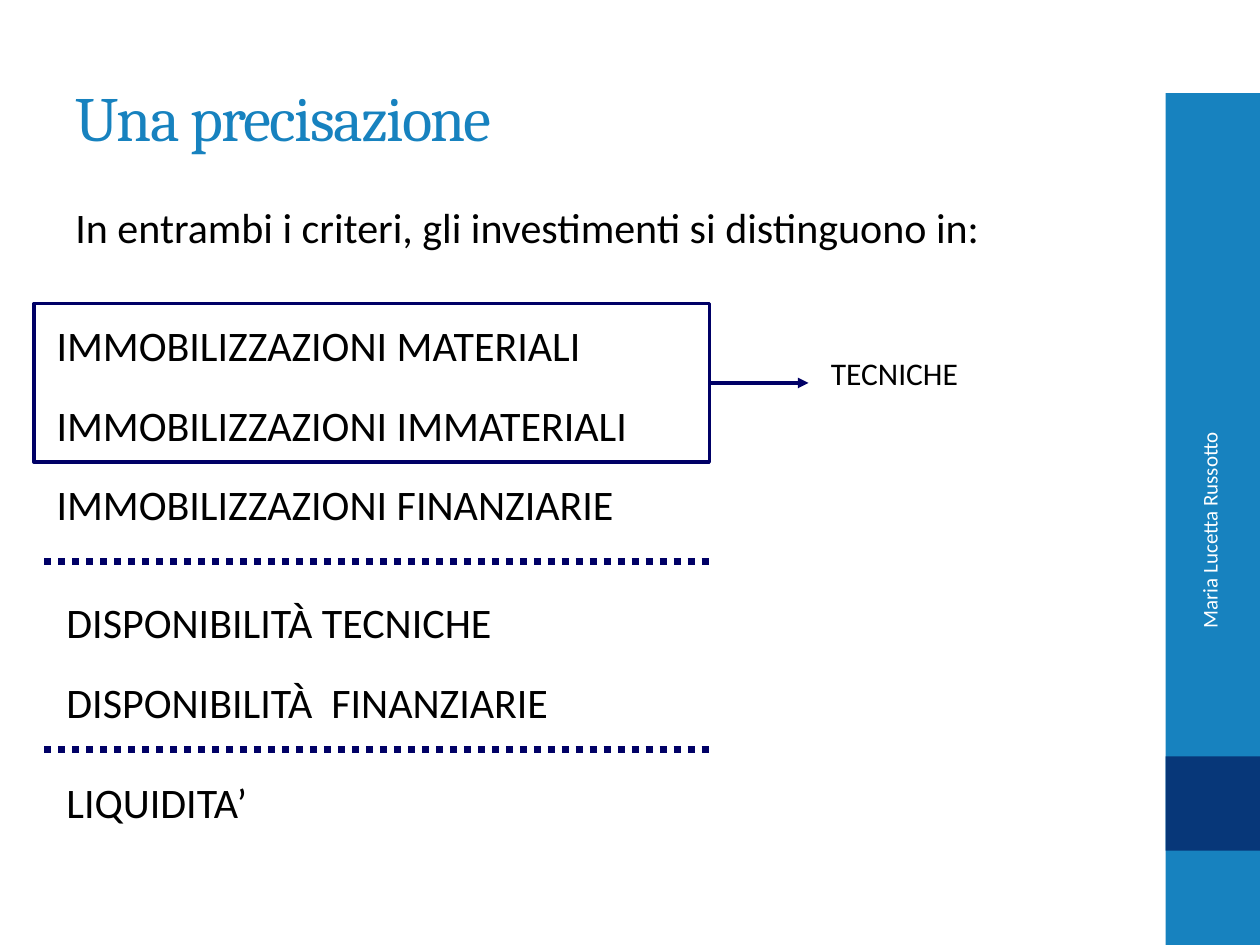
from lxml import etree
from pptx import Presentation
from pptx.dml.color import RGBColor
from pptx.enum.dml import MSO_LINE
from pptx.enum.shapes import MSO_CONNECTOR as CONN, MSO_SHAPE as SHAPE
from pptx.enum.text import MSO_ANCHOR as ANCHOR, PP_ALIGN as ALIGN
from pptx.oxml.ns import qn
from pptx.util import Cm, Pt

BLUE, DARK, NAVY, BLACK, WHITE = "1782BF", "073779", "000066", "000000", "FFFFFF"


def color(value):
    return RGBColor.from_string(value)


def add_text(s, text, x, y, w, h, size=24, font="Calibri", fill=BLACK,
             align=ALIGN.LEFT, anchor=ANCHOR.TOP, rotation=0, spacing=None):
    sp = s.shapes.add_textbox(Cm(x), Cm(y), Cm(w), Cm(h))
    sp.rotation = rotation
    tf = sp.text_frame
    tf.word_wrap = True
    tf.vertical_anchor = anchor
    p = tf.paragraphs[0]
    p.alignment = align
    r = p.add_run()
    r.text = text
    r.font.size, r.font.name = Pt(size), font
    r.font.color.rgb = color(fill)
    if spacing is not None:
        r.font._element.set("spc", str(spacing))
    return sp


def add_rect(s, x, y, w, h, fill=None, line=None):
    sp = s.shapes.add_shape(SHAPE.RECTANGLE, Cm(x), Cm(y), Cm(w), Cm(h))
    sp.shadow.inherit = False
    if fill:
        sp.fill.solid()
        sp.fill.fore_color.rgb = color(fill)
    else:
        sp.fill.background()
    if line:
        sp.line.color.rgb = color(line)
        sp.line.width = Pt(2)
    else:
        sp.line.fill.background()
    return sp


def add_line(s, x1, x2, y, width, dash=None, arrow=False):
    cx = s.shapes.add_connector(CONN.STRAIGHT, Cm(x1), Cm(y), Cm(x2), Cm(y))
    cx.line.color.rgb = color(NAVY)
    cx.line.width = Pt(width)
    if dash:
        cx.line.dash_style = dash
    if arrow:
        etree.SubElement(cx.line._get_or_add_ln(), qn("a:tailEnd"), type="triangle")
    etree.SubElement(cx._element.spPr, qn("a:effectLst"))
    return cx


def add_sidebar(s, x, y, w, h):
    add_rect(s, x, y, w, h, fill=BLUE)
    add_rect(s, x, y + h - 2 * w, w, w, fill=DARK)
    length, depth = 6.58, 1.02
    add_text(s, "Maria Lucetta Russotto", x + 0.88 - length / 2, y + 9.37,
             length, depth, size=12, fill=WHITE, align=ALIGN.RIGHT,
             anchor=ANCHOR.MIDDLE, rotation=270)


def add_header(s, x, y, w, h):
    title_h = h - 1.27
    add_text(s, "Una precisazione", x, y, w, title_h, size=36, font="Cambria",
             fill=BLUE, anchor=ANCHOR.MIDDLE, spacing=-100)
    add_text(s, "In entrambi i criteri, gli investimenti si distinguono in:",
             x, y + title_h, w, 1.27)


def add_investments(s, x, y, w):
    items = [
        ("IMMOBILIZZAZIONI MATERIALI", 0, 0, 11.25),
        ("IMMOBILIZZAZIONI IMMATERIALI", 0, 1.6, 12.19),
        ("IMMOBILIZZAZIONI FINANZIARIE", 0, 3.2, 11.86),
        ("DISPONIBILITÀ TECNICHE", 0.2, 5.59, 9.17),
        ("DISPONIBILITÀ  FINANZIARIE", 0.2, 7.19, 10.41),
        ("LIQUIDITA’", 0.2, 9.2, 4.29),
    ]
    for text, dx, dy, width in items:
        add_text(s, text, x + dx, y + dy, width, 1.27)
    for dy in (5, 8.79):
        add_line(s, x, x + w, y + dy, 4, dash=MSO_LINE.ROUND_DOT)


def add_technical_callout(s, x, y, w, h):
    frame = add_rect(s, x, y, w, h, line=NAVY)
    right = x + w
    arrow = add_line(s, right, right + 2, y + h / 2, 2, arrow=True)
    arrow.begin_connect(frame, 3)
    add_text(s, "TECNICHE", right + 2.2, y + 0.89, 4.67, 1.45, size=18)


def main():
    prs = Presentation()
    prs.slide_width, prs.slide_height = Cm(25.4), Cm(19.05)
    s = prs.slides.add_slide(prs.slide_layouts[6])
    add_sidebar(s, 23.5, 1.88, 1.9, 17.17)
    add_header(s, 1.27, 0.76, 21.16, 4.45)
    add_investments(s, 0.89, 6.32, 13.41)
    add_technical_callout(s, 0.69, 6.12, 13.61, 3.2)
    prs.save("out.pptx")


if __name__ == "__main__":
    main()
